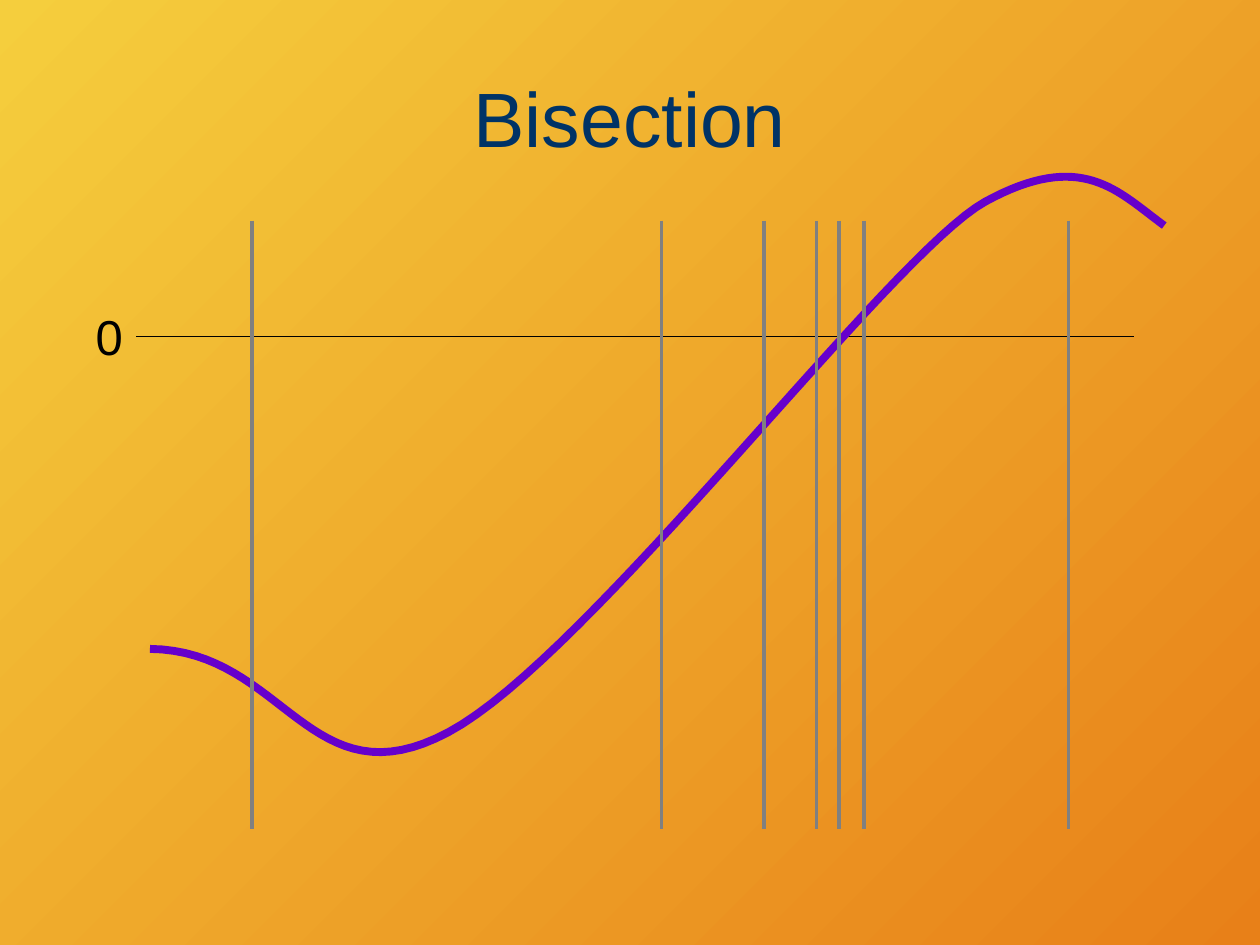
from dataclasses import dataclass

from lxml.etree import SubElement
from pptx import Presentation
from pptx.dml.color import RGBColor
from pptx.enum.text import MSO_ANCHOR, MSO_AUTO_SIZE, PP_ALIGN
from pptx.oxml.ns import qn
from pptx.util import Inches, Pt

NAVY = RGBColor(0x00, 0x33, 0x66)
BLACK = RGBColor(0x00, 0x00, 0x00)
PURPLE = RGBColor(0x66, 0x00, 0xCC)
GRAY = RGBColor(0x80, 0x80, 0x80)
YELLOW = RGBColor(0xF5, 0xCE, 0x3D)
ORANGE = RGBColor(0xE8, 0x80, 0x18)

Point = tuple[float, float]

# The first interval's ends, then each successive midpoint
BISECTION_XS = (2, 8.48, 5.25, 6.86, 6.06, 6.48, 6.66)
BOUND_TOP, BOUND_BOTTOM = 1.75, 6.58
AXIS_Y = 2.67
STEPS_PER_CURVE = 32


@dataclass(frozen=True)
class Bezier:
    start: Point
    control_1: Point
    control_2: Point
    end: Point

    def at(self, t: float) -> Point:
        s = 1 - t
        weights = (s**3, 3 * s * s * t, 3 * s * t * t, t**3)
        points = (self.start, self.control_1, self.control_2, self.end)
        return (
            sum(w * p[0] for w, p in zip(weights, points)),
            sum(w * p[1] for w, p in zip(weights, points)),
        )


FUNCTION_CURVE = (
    Bezier((1.19, 5.15), (2.26, 5.16), (2.46, 6.4), (3.56, 5.81)),
    Bezier((3.56, 5.81), (4.67, 5.22), (7.06, 2.02), (7.82, 1.6)),
    Bezier((7.82, 1.6), (8.59, 1.18), (8.87, 1.52), (9.24, 1.79)),
)


@dataclass(frozen=True)
class Label:
    text: str
    left: float
    top: float
    width: float
    height: float
    size: int
    color: RGBColor
    align: PP_ALIGN = PP_ALIGN.LEFT
    anchor: MSO_ANCHOR = MSO_ANCHOR.TOP
    wrap: bool = True


TITLE = Label("Bisection", 0.5, 0.3, 9, 1.25, 44, NAVY,
              PP_ALIGN.CENTER, MSO_ANCHOR.MIDDLE)
ZERO = Label("0", 0.66, 2.38, 0.42, 0.57, 28, BLACK, wrap=False)


def add_label(shapes, label: Label) -> None:
    box = shapes.add_textbox(Inches(label.left), Inches(label.top),
                             Inches(label.width), Inches(label.height))
    frame = box.text_frame
    frame.word_wrap = label.wrap
    frame.auto_size = MSO_AUTO_SIZE.NONE if label.wrap else MSO_AUTO_SIZE.SHAPE_TO_FIT_TEXT
    frame.vertical_anchor = label.anchor
    paragraph = frame.paragraphs[0]
    paragraph.text = label.text
    paragraph.alignment = label.align
    paragraph.font.name = "Arial"
    paragraph.font.size = Pt(label.size)
    paragraph.font.color.rgb = label.color


def add_line(shapes, start: Point, end: Point, color: RGBColor, width: float) -> None:
    line = shapes.add_connector(1, *map(Inches, start + end))
    line.line.color.rgb = color
    line.line.width = Pt(width)
    SubElement(line._element.spPr, qn("a:effectLst"))


def add_curve(shapes, beziers: tuple[Bezier, ...], color: RGBColor, width: float) -> None:
    """Draw joined Bezier curves as one open, finely stepped outline."""
    points = [
        bezier.at(step / STEPS_PER_CURVE)
        for bezier in beziers
        for step in range(1, STEPS_PER_CURVE + 1)
    ]
    x, y = beziers[0].start
    builder = shapes.build_freeform(Inches(x), Inches(y))
    builder.add_line_segments([(Inches(x), Inches(y)) for x, y in points], close=False)
    curve = builder.convert_to_shape()
    curve.shadow.inherit = False
    curve.fill.background()
    curve.line.color.rgb = color
    curve.line.width = Pt(width)


def fill_background(slide) -> None:
    fill = slide.background.fill
    fill.gradient()
    fill.gradient_angle = 315  # counter-clockwise: top left to bottom right
    for stop, color, position in zip(fill.gradient_stops, (YELLOW, ORANGE), (0, 1)):
        stop.color.rgb = color
        stop.position = position


def main() -> None:
    presentation = Presentation()
    presentation.slide_width = Inches(10)
    presentation.slide_height = Inches(7.5)
    slide = presentation.slides.add_slide(presentation.slide_layouts[6])
    fill_background(slide)
    add_label(slide.shapes, TITLE)

    plot = slide.shapes.add_group_shape().shapes
    add_line(plot, (1.08, AXIS_Y), (9, AXIS_Y), BLACK, 0.75)
    add_label(plot, ZERO)
    add_curve(plot, FUNCTION_CURVE, PURPLE, 4.5)

    for x in BISECTION_XS:
        add_line(slide.shapes, (x, BOUND_TOP), (x, BOUND_BOTTOM), GRAY, 2.25)
    presentation.save("out.pptx")


if __name__ == "__main__":
    main()
